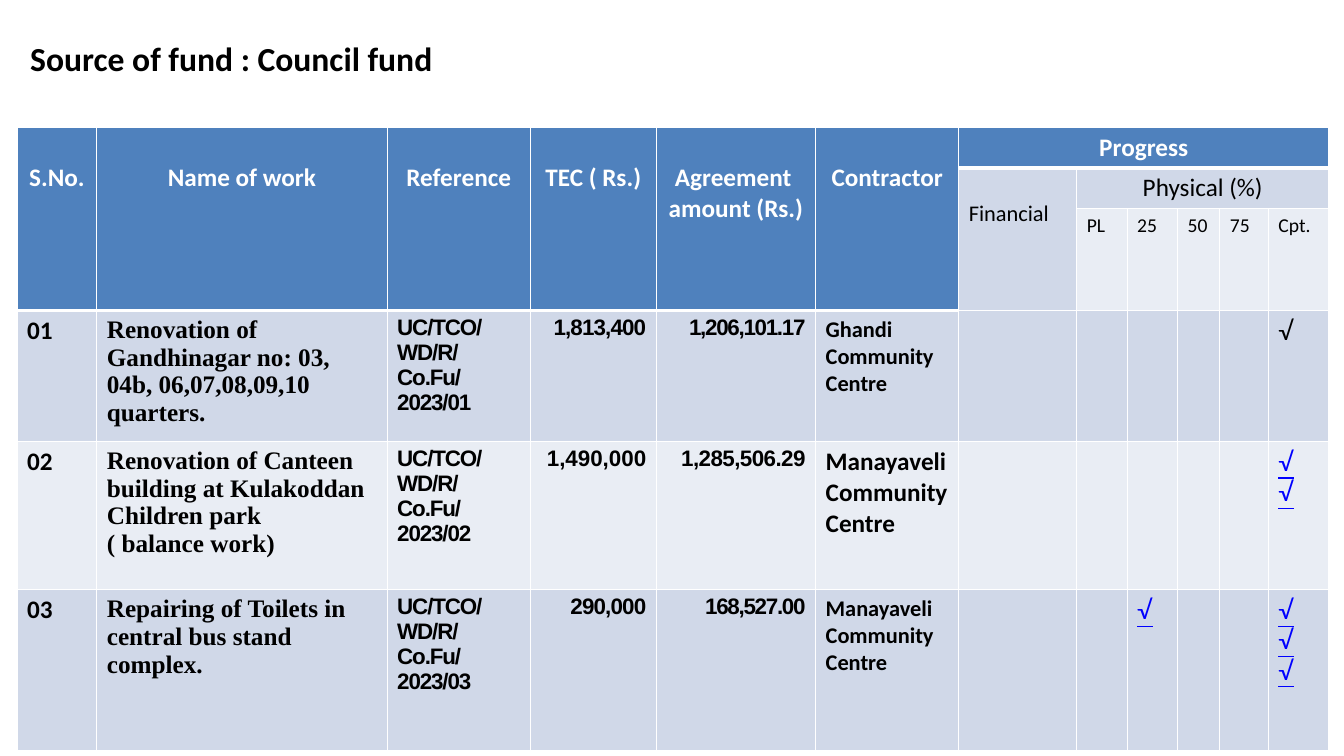
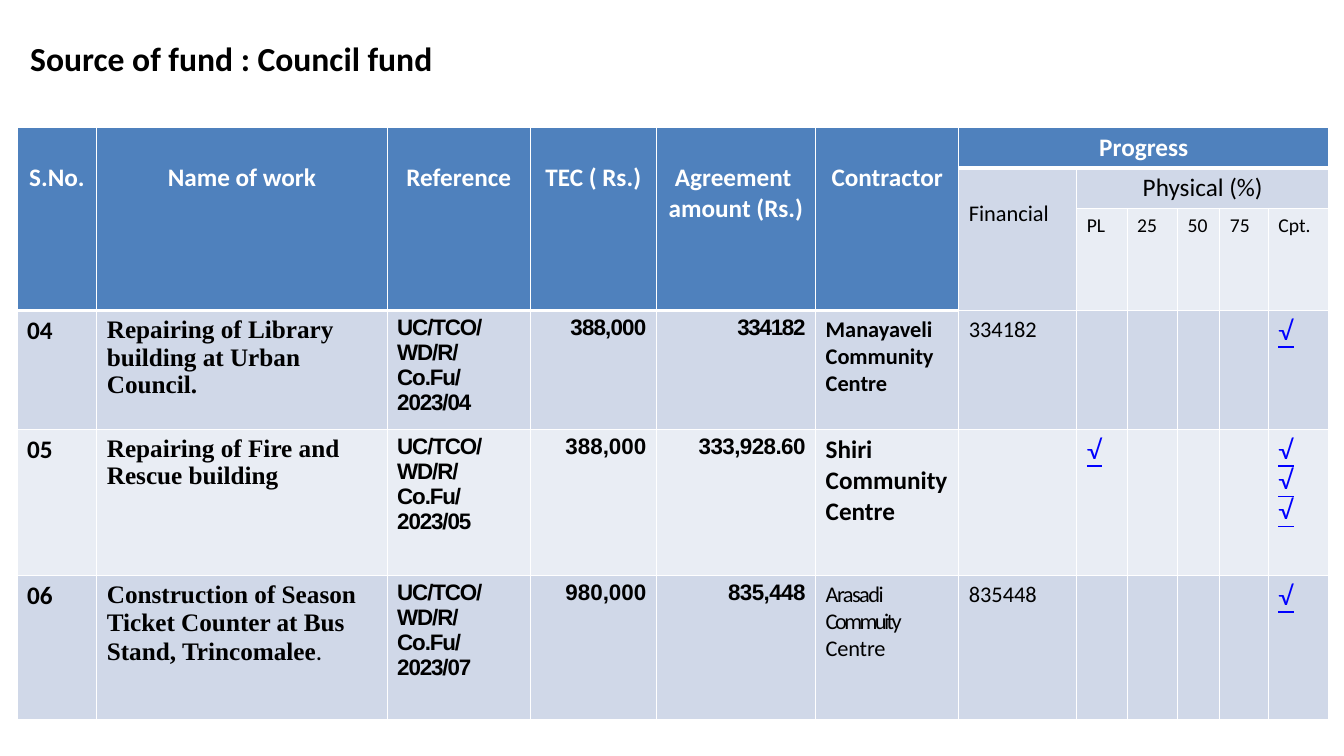
import dataclasses
import pptx
import pptx.dml.color
import pptx.enum.text
import pptx.oxml
import pptx.oxml.ns
import pptx.util

Inches = pptx.util.Inches
ALIGN = pptx.enum.text.PP_ALIGN

WHITE, BLACK, LINK = "FFFFFF", "000000", "0000FF"
HEADER, BAND, LIGHT = "4F81BD", "D0D8E8", "E9EDF4"
BODY_FONT, NAME_FONT, FIGURE_FONT, TICK_FONT = "Calibri", "Times New Roman", "Arial", "Lato"
TITLE = "Source of fund : Council fund"

COLUMN_WIDTHS = [0.79, 2.88, 1.42, 1.25, 1.58, 1.42, 1.17, 0.5, 0.5, 0.42, 0.48, 0.6]
HEADER_HEIGHTS = [0.4, 0.4, 1]
HEADINGS = [["S.No."], ["Name of work"], ["Reference"], ["TEC ( Rs.)"],
            ["Agreement ", "amount (Rs.)"], ["Contractor"]]
STAGES = ["PL", "25", "50", "75", "Cpt."]
FINANCIAL = len(HEADINGS)
FIRST_STAGE = FINANCIAL + 1
LAST = len(COLUMN_WIDTHS) - 1
REFERENCE = "UC/TCO/WD/R/Co.Fu/"
CENTRE = "Community Centre"


@dataclasses.dataclass
class Span:
    text: str
    size: float = 18
    font: str = BODY_FONT
    color: str = BLACK
    bold: bool = False
    underline: bool = False
    spacing: float = 0


@dataclasses.dataclass
class Work:
    number: str
    name: list
    reference: list
    estimate: str
    agreement: str
    contractor: list
    ticks: dict
    height: float
    figure_spacing: tuple = (0, -0.4)
    financial: str = ""
    tick_linked: bool = True


def rgb(color):
    return pptx.dml.color.RGBColor.from_string(color)


def write(frame, paragraphs, align=ALIGN.LEFT):
    for index, spans in enumerate(paragraphs):
        para = frame.add_paragraph() if index else frame.paragraphs[0]
        para.alignment = align
        for item in spans:
            span = para.add_run()
            span.text = item.text
            span.font.size = pptx.util.Pt(item.size)
            span.font.name = item.font
            span.font.bold = item.bold
            span.font.underline = item.underline
            span.font.color.rgb = rgb(item.color)
            if item.spacing:
                span._r.get_or_add_rPr().set("spc", str(round(item.spacing * 100)))


def lines(texts, **style):
    return [[Span(text, **style)] for text in texts]


def name_lines(*texts):
    return lines(texts, font=NAME_FONT, bold=True)


def contractor_lines(name, size=16):
    return lines([name, CENTRE], size=size, bold=True)


def add_title(page):
    box = page.shapes.title
    box.left, box.top, box.width, box.height = map(Inches, (0.2, 0.33, 5.08, 0.5))
    frame = box.text_frame
    frame.word_wrap = True
    frame.auto_size = pptx.enum.text.MSO_AUTO_SIZE.NONE
    frame.vertical_anchor = pptx.enum.text.MSO_ANCHOR.TOP
    write(frame, lines([TITLE], size=24, bold=True))


def style_cell(cell, fill, top=1, bottom=1):
    properties = cell._tc.get_or_add_tcPr()
    for side, width in (("L", 1), ("R", 1), ("T", top), ("B", bottom)):
        properties.append(pptx.oxml.parse_xml(
            f'<a:ln{side} {pptx.oxml.ns.nsdecls("a")} w="{pptx.util.Pt(width)}">'
            f'<a:solidFill><a:srgbClr val="{WHITE}"/></a:solidFill></a:ln{side}>'))
    cell.fill.solid()
    cell.fill.fore_color.rgb = rgb(fill)


def style_header(table):
    for column in range(len(COLUMN_WIDTHS)):
        for row in range(len(HEADER_HEIGHTS)):
            if column < FINANCIAL or row == 0:
                style_cell(table.cell(row, column), HEADER, bottom=3)
            else:
                fill = BAND if row == 1 or column == FINANCIAL else LIGHT
                style_cell(table.cell(row, column), fill, top=3 if row == 1 else 1)


def fill_header(table):
    style_header(table)
    for column, texts in enumerate(HEADINGS):
        cell = table.cell(0, column)
        cell.merge(table.cell(2, column))
        cell.margin_top = Inches(0.35)
        write(cell.text_frame, lines(texts, color=WHITE, bold=True), ALIGN.CENTER)
    progress = table.cell(0, FINANCIAL)
    progress.merge(table.cell(0, LAST))
    write(progress.text_frame, lines(["Progress"], color=WHITE, bold=True), ALIGN.CENTER)
    financial = table.cell(1, FINANCIAL)
    financial.merge(table.cell(2, FINANCIAL))
    financial.margin_top = Inches(0.32)
    write(financial.text_frame, lines(["Financial"], size=16))
    physical = table.cell(1, FIRST_STAGE)
    physical.merge(table.cell(1, LAST))
    write(physical.text_frame, lines(["Physical (%)"]), ALIGN.CENTER)
    for column, stage in enumerate(STAGES, FIRST_STAGE):
        write(table.cell(2, column).text_frame, lines([stage], size=14))


def fill_work(table, row, work):
    first = row == len(HEADER_HEIGHTS)
    fill = BAND if (row - len(HEADER_HEIGHTS)) % 2 == 0 else LIGHT
    for column in range(len(COLUMN_WIDTHS)):
        style_cell(table.cell(row, column), fill, top=3 if first and column < FINANCIAL else 1)
    figure = dict(size=16, font=FIGURE_FONT, bold=True)
    contents = [
        (lines([work.number], bold=True), ALIGN.LEFT),
        (work.name, ALIGN.LEFT),
        (lines(work.reference, spacing=-0.8, **figure), ALIGN.LEFT),
        (lines([work.estimate], spacing=work.figure_spacing[0], **figure), ALIGN.RIGHT),
        (lines([work.agreement], spacing=work.figure_spacing[1], **figure), ALIGN.RIGHT),
        (work.contractor, ALIGN.LEFT),
    ]
    if work.financial:
        contents.append((lines([work.financial], size=16), ALIGN.LEFT))
    for column, (paragraphs, align) in enumerate(contents):
        write(table.cell(row, column).text_frame, paragraphs, align)
    color = LINK if work.tick_linked else BLACK
    for stage, count in work.ticks.items():
        cell = table.cell(row, FIRST_STAGE + STAGES.index(stage))
        write(cell.text_frame, lines(["√"] * count, font=TICK_FONT, color=color,
                                     underline=work.tick_linked))


def add_works_table(page, works):
    heights = HEADER_HEIGHTS + [work.height for work in works]
    table = page.shapes.add_table(
        len(heights), len(COLUMN_WIDTHS), Inches(0.17), Inches(1.26),
        Inches(sum(COLUMN_WIDTHS)), Inches(sum(heights))).table
    table.first_row = False
    table.horz_banding = False
    for column, width in zip(table.columns, COLUMN_WIDTHS):
        column.width = Inches(width)
    for row, height in zip(table.rows, heights):
        row.height = Inches(height)
    fill_header(table)
    for row, work in enumerate(works, len(HEADER_HEIGHTS)):
        fill_work(table, row, work)


TIGHT = (-0.6, -0.9)
PAGES = [
    [
        Work("01", name_lines("Renovation of Gandhinagar no: 03, 04b, 06,07,08,09,10 quarters."),
             [REFERENCE, "2023/01"], "1,813,400", "1,206,101.17",
             contractor_lines("Ghandi"), {"Cpt.": 1}, 1.3, TIGHT, tick_linked=False),
        Work("02", name_lines("Renovation of Canteen building at Kulakoddan Children park",
                              "( balance work)"),
             [REFERENCE, "2023/02"], "1,490,000", "1,285,506.29",
             contractor_lines("Manayaveli", 18), {"Cpt.": 2}, 1.47),
        Work("03", name_lines("Repairing of Toilets in central bus stand complex."),
             [REFERENCE, "2023/03"], "290,000", "168,527.00",
             contractor_lines("Manayaveli"), {"25": 1, "Cpt.": 3}, 1.6, TIGHT),
    ],
    [
        Work("04", name_lines("Repairing of Library building at Urban Council."),
             [REFERENCE, "2023/04"], "388,000", "334182",
             contractor_lines("Manayaveli"), {"Cpt.": 1}, 1.18, TIGHT, "334182"),
        Work("05", name_lines("Repairing of Fire and Rescue building"),
             [REFERENCE, "2023/05"], "388,000", "333,928.60",
             contractor_lines("Shiri", 18), {"PL": 1, "Cpt.": 3}, 1.45),
        Work("06", [[Span("Construction of Season Ticket Counter at Bus Stand, Trincomalee",
                          font=NAME_FONT, bold=True), Span(".", spacing=-3.8)]],
             [REFERENCE + "2023/07"], "980,000", "835,448",
             [[Span("Arasadi ", 16, spacing=-1.1), Span("Commuity ", 16, spacing=-1.8),
               Span("Centre", 16, spacing=-0.1)]],
             {"Cpt.": 1}, 1.43, financial="835448"),
    ],
]


def main():
    deck = pptx.Presentation()
    deck.slide_width, deck.slide_height = Inches(13.33), Inches(7.5)
    for works in PAGES:
        page = deck.slides.add_slide(deck.slide_layouts[5])
        add_title(page)
        add_works_table(page, works)
    deck.save("out.pptx")


if __name__ == "__main__":
    main()
